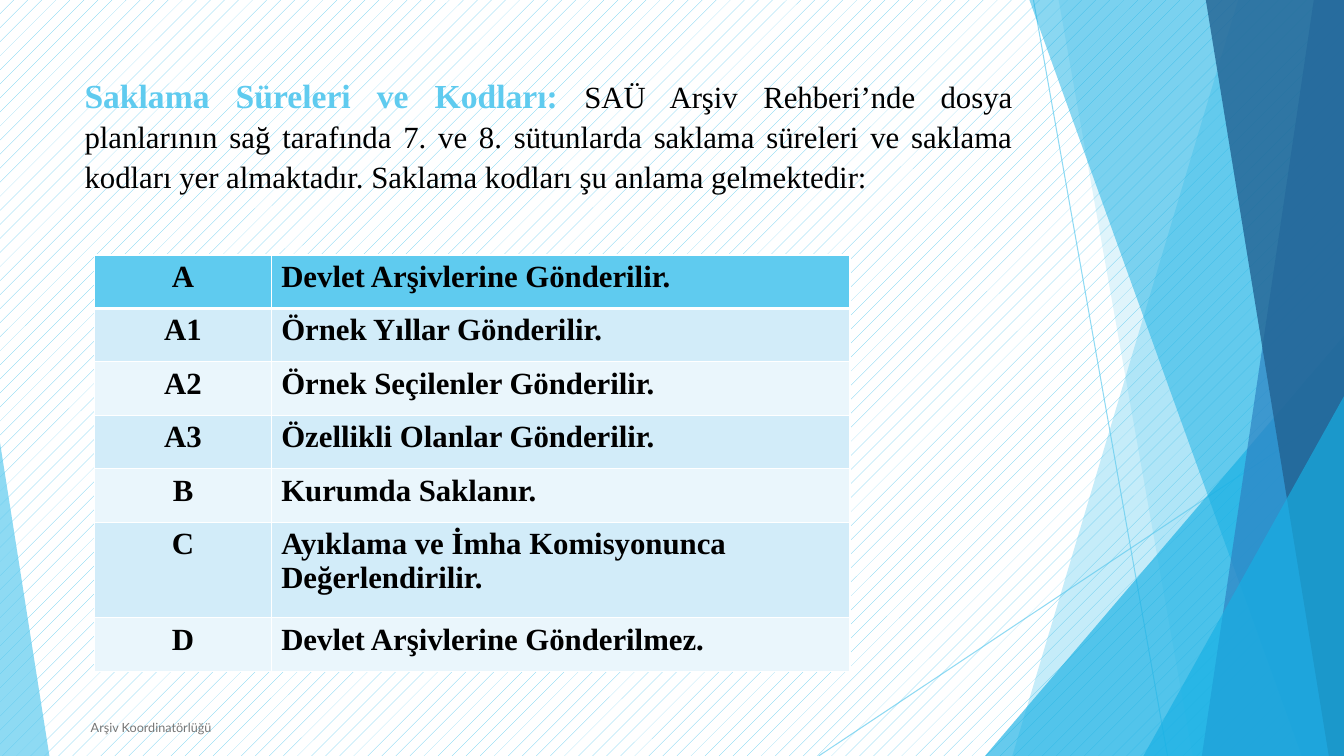
from lxml import etree
from pptx import Presentation
from pptx.dml.color import RGBColor
from pptx.enum import dml, shapes, text
from pptx.oxml.ns import qn
from pptx.util import Inches, Pt

SKY = RGBColor(0x5F, 0xCB, 0xEF)
CYAN = RGBColor(0x17, 0xB0, 0xE4)
BLUE = RGBColor(0x2E, 0x83, 0xC3)
NAVY = RGBColor(0x22, 0x62, 0x92)
BAND_DARK = RGBColor(0xD2, 0xEC, 0xF9)
BAND_LIGHT = RGBColor(0xEA, 0xF6, 0xFC)
WHITE = RGBColor(0xFF, 0xFF, 0xFF)
BLACK = RGBColor(0, 0, 0)
GRAY = RGBColor(0x76, 0x76, 0x76)
SERIF = "Times New Roman"
WIDTH, HEIGHT = 13.33, 7.5

CODES = [
    ("A", "Devlet Arşivlerine Gönderilir."),
    ("A1", "Örnek Yıllar Gönderilir."),
    ("A2", "Örnek Seçilenler Gönderilir."),
    ("A3", "Özellikli Olanlar Gönderilir."),
    ("B", "Kurumda Saklanır."),
    ("C", "Ayıklama ve İmha Komisyonunca Değerlendirilir."),
    ("D", "Devlet Arşivlerine Gönderilmez."),
]


def set_alpha(fill_parent, percent):
    color = next(fill_parent.iter(qn("a:srgbClr")))
    etree.SubElement(color, qn("a:alpha"), val=str(percent * 1000))


def paint(sp, color, percent):
    sp.shadow.inherit = False
    sp.fill.solid()
    sp.fill.fore_color.rgb = color
    sp.line.fill.background()
    set_alpha(sp._element.spPr, percent)


def add_ray(s, x1, y1, x2, y2):
    ray = s.shapes.add_connector(shapes.MSO_CONNECTOR.STRAIGHT,
                                 Inches(x1), Inches(y1), Inches(x2), Inches(y2))
    ray.line.color.rgb = SKY
    ray.line.width = Pt(0.75)
    set_alpha(ray._element.spPr, 70)
    etree.SubElement(ray._element.spPr, qn("a:effectLst"))


def add_facet(s, top_x, bottom_x, color, percent):
    fb = s.shapes.build_freeform(Inches(top_x), 0)
    corners = [(WIDTH, 0), (WIDTH, HEIGHT), (bottom_x, HEIGHT)]
    fb.add_line_segments([(Inches(x), Inches(y)) for x, y in corners], close=True)
    paint(fb.convert_to_shape(), color, percent)


def add_triangle(s, left, top, width, apex, color, percent):
    sp = s.shapes.add_shape(shapes.MSO_SHAPE.ISOSCELES_TRIANGLE, Inches(left),
                            Inches(top), Inches(width), Inches(HEIGHT - top))
    sp.adjustments[0] = apex
    paint(sp, color, percent)


def add_run(p, words, size, color, font=SERIF, bold=False):
    r = p.add_run()
    r.text = words
    r.font.size = Pt(size)
    r.font.name = font
    r.font.bold = bold
    r.font.color.rgb = color


def add_text(s, left, top, width, height, anchor):
    tf = s.shapes.add_textbox(Inches(left), Inches(top),
                              Inches(width), Inches(height)).text_frame
    tf.word_wrap = True
    tf.vertical_anchor = anchor
    return tf


def set_borders(cell, widths):
    tc_pr = cell._tc.get_or_add_tcPr()
    for i, (side, width) in enumerate(widths.items()):
        ln = etree.Element(qn(f"a:{side}"), w=str(Pt(width)))
        fill = etree.SubElement(ln, qn("a:solidFill"))
        etree.SubElement(fill, qn("a:srgbClr"), val=str(WHITE))
        tc_pr.insert(i, ln)


def add_code_table(s):
    heights = [0.95 if code == "C" else 0.53 for code, _ in CODES]
    table = s.shapes.add_table(len(CODES), 2, Inches(0.94), Inches(2.53),
                               Inches(7.49), Inches(sum(heights))).table
    for col, width in zip(table.columns, (1.75, 5.74)):
        col.width = Inches(width)
    for i, (row, height) in enumerate(zip(CODES, heights)):
        table.rows[i].height = Inches(height)
        band = SKY if i == 0 else BAND_DARK if i % 2 else BAND_LIGHT
        for j, words in enumerate(row):
            cell = table.cell(i, j)
            cell.fill.solid()
            cell.fill.fore_color.rgb = band
            set_borders(cell, {"lnL": 1, "lnR": 1, "lnT": 3 if i == 1 else 1,
                               "lnB": 3 if i == 0 else 1})
            p = cell.text_frame.paragraphs[0]
            p.alignment = text.PP_ALIGN.LEFT if j else text.PP_ALIGN.CENTER
            add_run(p, words, 22, BLACK, bold=True)


def add_backdrop(s):
    fill = s.background.fill
    fill.patterned()
    fill.pattern = dml.MSO_PATTERN.PERCENT_5
    fill.fore_color.rgb = SKY
    fill.back_color.rgb = WHITE
    add_ray(s, 10.25, 0, 11.58, HEIGHT)
    add_ray(s, WIDTH, 4.03, 8.12, HEIGHT)
    add_facet(s, 12.28, 10.04, SKY, 36)
    add_facet(s, 10.5, 11.83, SKY, 20)
    add_triangle(s, 9.77, 3.33, 3.56, 1, CYAN, 66)
    add_facet(s, 10.21, 12.91, CYAN, 50)
    add_facet(s, 13.03, 11.92, BLUE, 70)
    add_facet(s, 11.96, 13.18, NAVY, 80)
    add_triangle(s, 11.34, 3.93, 1.99, 1, CYAN, 66)
    add_triangle(s, 0, 4.39, 0.49, 0, SKY, 70)


def main():
    prs = Presentation()
    prs.slide_width, prs.slide_height = Inches(WIDTH), Inches(HEIGHT)
    s = prs.slides.add_slide(prs.slide_layouts[6])
    add_backdrop(s)

    footer = add_text(s, 0.74, 7.01, 6.79, 0.42, text.MSO_ANCHOR.MIDDLE)
    footer.margin_left = Inches(0.16)
    add_run(footer.paragraphs[0], "Arşiv Koordinatörlüğü", 9, GRAY, "Lato")

    p = add_text(s, 0.74, 0.67, 9.4, 1.7, text.MSO_ANCHOR.TOP).paragraphs[0]
    p.alignment = text.PP_ALIGN.JUSTIFY
    p.line_spacing = 1.07
    add_run(p, "Saklama Süreleri ve Kodları: ", 24, SKY, bold=True)
    add_run(p, "SAÜ Arşiv Rehberi’nde dosya planlarının sağ tarafında 7. ve 8. "
               "sütunlarda saklama süreleri ve saklama kodları yer almaktadır. "
               "Saklama kodları şu anlama gelmektedir:", 22, BLACK)

    add_code_table(s)
    prs.save("out.pptx")


if __name__ == "__main__":
    main()
